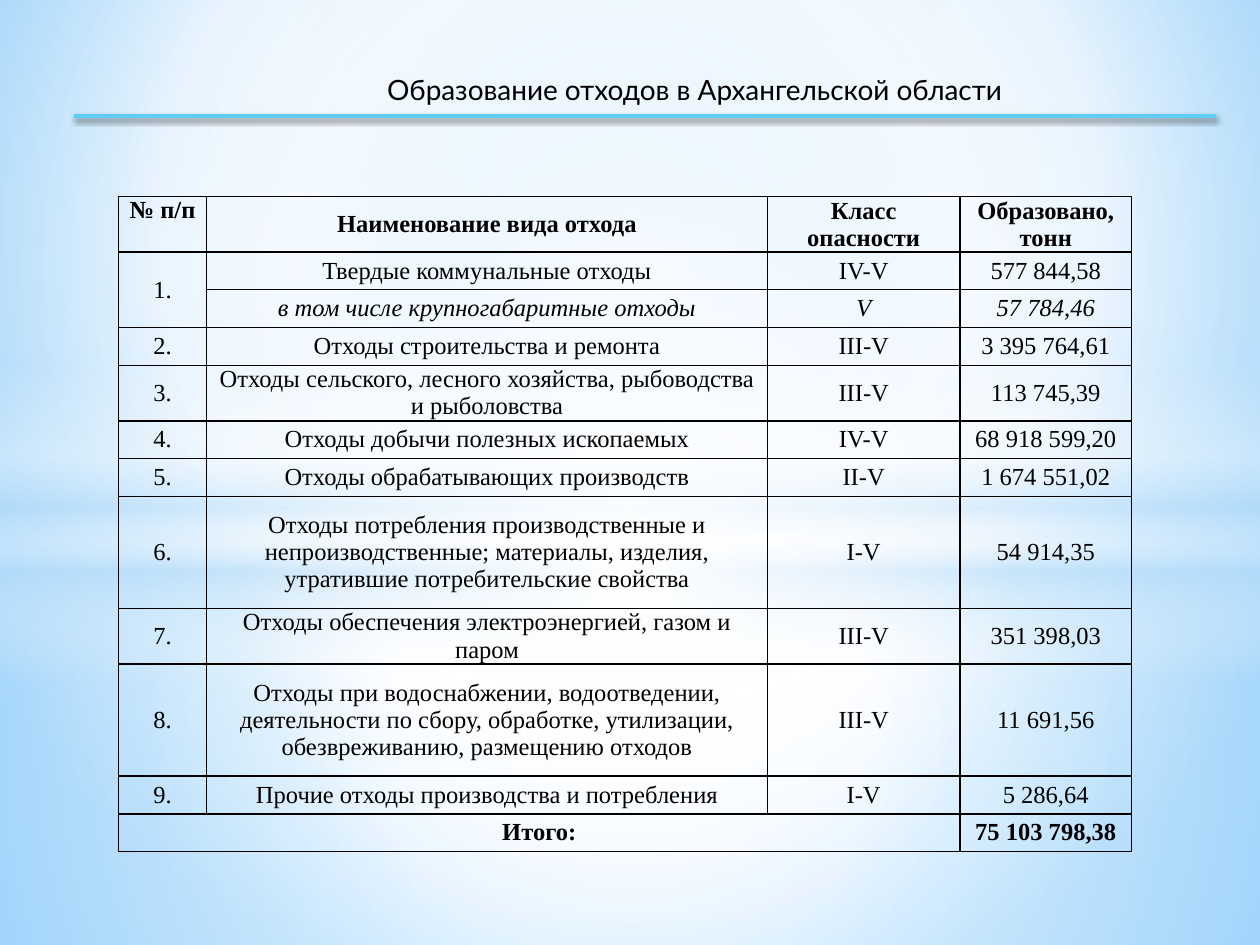
from dataclasses import dataclass

from lxml import etree
from pptx import Presentation
from pptx.dml.color import RGBColor
from pptx.enum.shapes import MSO_CONNECTOR, MSO_SHAPE
from pptx.enum.text import MSO_ANCHOR, PP_ALIGN
from pptx.oxml.ns import qn
from pptx.util import Inches, Pt

RECT, OVAL = MSO_SHAPE.RECTANGLE, MSO_SHAPE.OVAL
STRAIGHT = MSO_CONNECTOR.STRAIGHT
CENTER = PP_ALIGN.CENTER
TOP, MIDDLE = MSO_ANCHOR.TOP, MSO_ANCHOR.MIDDLE
CENTRE_RECT = (50, 50, 50, 50)


@dataclass(frozen=True)
class Theme:
    title_font: str = "Lato"
    table_font: str = "Times New Roman"
    title_size: int = 16
    table_size: int = 14
    text: str = "000000"
    accent: str = "5ECCF3"
    white: str = "FFFFFF"
    pale: str = "B4DCFA"
    sky: str = "9ED5FF"
    deep: str = "5BB9FF"


def sub(parent, tag, **attrs):
    """Append a drawing element with the given attributes."""
    child = etree.SubElement(parent, qn(tag))
    for name, value in attrs.items():
        child.set(name, str(value))
    return child


def add_color(parent, color, alpha=100):
    clr = sub(parent, "a:srgbClr", val=color)
    if alpha < 100:
        sub(clr, "a:alpha", val=alpha * 1000)


class SlideBuilder:
    def __init__(self, slide, theme):
        self.s = slide
        self.theme = theme

    def set_gradient(self, fill, owner, stops, focus=None, angle=90):
        """Stops are (position, colour, opacity); focus makes it radial."""
        fill.gradient()
        grad = next(owner.iter(qn("a:gradFill")))
        for child in list(grad):
            grad.remove(child)
        stop_list = sub(grad, "a:gsLst")
        for pos, color, alpha in stops:
            add_color(sub(stop_list, "a:gs", pos=pos * 1000), color, alpha)
        if focus:
            sides = {k: v * 1000 for k, v in zip("ltrb", focus)}
            sub(sub(grad, "a:path", path="circle"), "a:fillToRect", **sides)
        else:
            sub(grad, "a:lin", ang=angle * 60000, scaled=0)

    def background(self, stops, focus):
        self.set_gradient(self.s.background.fill, self.s._element, stops, focus)

    def glow(self, kind, top, height, stops, focus=CENTRE_RECT):
        """Full-width translucent shape."""
        sp = self.s.shapes.add_shape(kind, 0, Inches(top), Inches(10), Inches(height))
        sp.shadow.inherit = False
        sp.line.fill.background()
        self.set_gradient(sp.fill, sp._element.spPr, stops, focus)

    def add_text(self, tf, text, font, size, bold=False, italic=False):
        p = tf.paragraphs[0]
        p.alignment = CENTER
        r = p.add_run()
        r.text = text
        r.font.name, r.font.size = font, Pt(size)
        r.font.bold, r.font.italic = bold, italic
        r.font.color.rgb = RGBColor.from_string(self.theme.text)

    def title(self, text, left, top, width, height):
        sp = self.s.shapes.title
        sp.left, sp.top = Inches(left), Inches(top)
        sp.width, sp.height = Inches(width), Inches(height)
        self.s.shapes._spTree.append(sp._element)  # bring above the glows
        tf = sp.text_frame
        tf.word_wrap = True
        tf.vertical_anchor = MIDDLE
        self.add_text(tf, text, self.theme.title_font, self.theme.title_size)

    def rule(self, left, right, y):
        line = self.s.shapes.add_connector(
            STRAIGHT, Inches(left), Inches(y), Inches(right), Inches(y))
        line.line.color.rgb = RGBColor.from_string(self.theme.accent)
        line.line.width = Pt(2)
        effects = sub(line._element.spPr, "a:effectLst")
        shadow = sub(effects, "a:outerShdw", blurRad=Pt(3.1), dist=Pt(1.8),
                     dir=90 * 60000, rotWithShape=0)
        add_color(shadow, self.theme.text, 45)

    def style_cell(self, cell):
        cell.fill.background()
        cell.vertical_anchor = MIDDLE
        cell.margin_left = cell.margin_right = Inches(0.05)
        cell.margin_top = cell.margin_bottom = 0
        tc_pr = cell._tc.get_or_add_tcPr()
        for i, side in enumerate(("a:lnL", "a:lnR", "a:lnT", "a:lnB")):
            border = sub(tc_pr, side, w=Pt(1))
            add_color(sub(border, "a:solidFill"), self.theme.text)
            tc_pr.insert(i, border)  # borders come before the fill

    def table(self, left, top, widths, heights, rows, bold_rows, italic_rows, merges):
        frame = self.s.shapes.add_table(
            len(rows), len(widths), Inches(left), Inches(top),
            Inches(sum(widths)), Inches(sum(heights)))
        tbl = frame.table
        tbl.first_row = tbl.horz_banding = False
        for col, width in zip(tbl.columns, widths):
            col.width = Inches(width)
        for i, (row, height) in enumerate(zip(rows, heights)):
            tbl.rows[i].height = Inches(height)
            for j, text in enumerate(row):
                cell = tbl.cell(i, j)
                self.style_cell(cell)
                if text:
                    self.add_text(cell.text_frame, text, self.theme.table_font,
                                  self.theme.table_size, i in bold_rows, i in italic_rows)
        for first, last in merges:
            tbl.cell(*first).merge(tbl.cell(*last))
        return tbl


WASTE_ROWS = [
    ("№ п/п", "Наименование вида отхода", "Класс опасности", "Образовано, тонн"),
    ("1.", "Твердые коммунальные отходы", "IV-V", "577 844,58"),
    ("", "в том числе крупногабаритные отходы", "V", "57 784,46"),
    ("2.", "Отходы строительства и ремонта", "III-V", "3 395 764,61"),
    ("3.", "Отходы сельского, лесного хозяйства, рыбоводства и рыболовства",
     "III-V", "113 745,39"),
    ("4.", "Отходы добычи полезных ископаемых", "IV-V", "68 918 599,20"),
    ("5.", "Отходы обрабатывающих производств", "II-V", "1 674 551,02"),
    ("6.", "Отходы потребления производственные и непроизводственные; материалы, "
     "изделия, утратившие потребительские свойства", "I-V", "54 914,35"),
    ("7.", "Отходы обеспечения электроэнергией, газом и паром", "III-V", "351 398,03"),
    ("8.", "Отходы при водоснабжении, водоотведении, деятельности по сбору, "
     "обработке, утилизации, обезвреживанию, размещению отходов",
     "III-V", "11 691,56"),
    ("9.", "Прочие отходы производства и потребления", "I-V", "5 286,64"),
    ("Итого:", "", "", "75 103 798,38"),
]
COL_WIDTHS = (0.7, 4.45, 1.53, 1.36)
ONE, TWO, THREE = 0.3, 0.44, 0.89  # row heights by lines of text
ROW_HEIGHTS = (TWO, ONE, ONE, ONE, TWO, ONE, ONE, THREE, TWO, THREE, ONE, ONE)


def main():
    prs = Presentation()
    prs.slide_width, prs.slide_height = Inches(10), Inches(7.5)
    t = Theme()
    b = SlideBuilder(prs.slides.add_slide(prs.slide_layouts[5]), t)

    # Sky background with soft light
    b.background([(0, t.sky, 100), (60, t.white, 100), (100, t.deep, 100)],
                 (20, 10, 20, 60))
    b.glow(RECT, 4.23, 3.27, [(0, t.white, 91), (37, t.white, 76), (100, t.pale, 79)])
    b.glow(RECT, 0, 4.23, [(0, t.white, 89), (48, t.white, 62), (100, t.pale, 79)])
    b.glow(RECT, 2.9, 2.5, [(0, t.white, 0), (29, t.white, 30), (45, t.pale, 40),
                            (55, t.white, 26), (65, t.pale, 60), (100, t.white, 0)],
           focus=None)
    b.glow(OVAL, 1.75, 5.58, [(0, t.white, 100), (54, t.white, 0)])

    # Title and rule
    b.title("Образование отходов в Архангельской области", 1.3, 0.52, 8.43, 0.37)
    b.rule(0.59, 9.65, 0.92)

    # Waste table
    last = len(WASTE_ROWS) - 1
    tbl = b.table(0.94, 1.56, COL_WIDTHS, ROW_HEIGHTS, WASTE_ROWS,
                  bold_rows=(0, last), italic_rows=(2,),
                  merges=[((1, 0), (2, 0)), ((last, 0), (last, 2))])
    tbl.cell(0, 0).vertical_anchor = TOP

    prs.save("out.pptx")


if __name__ == "__main__":
    main()
